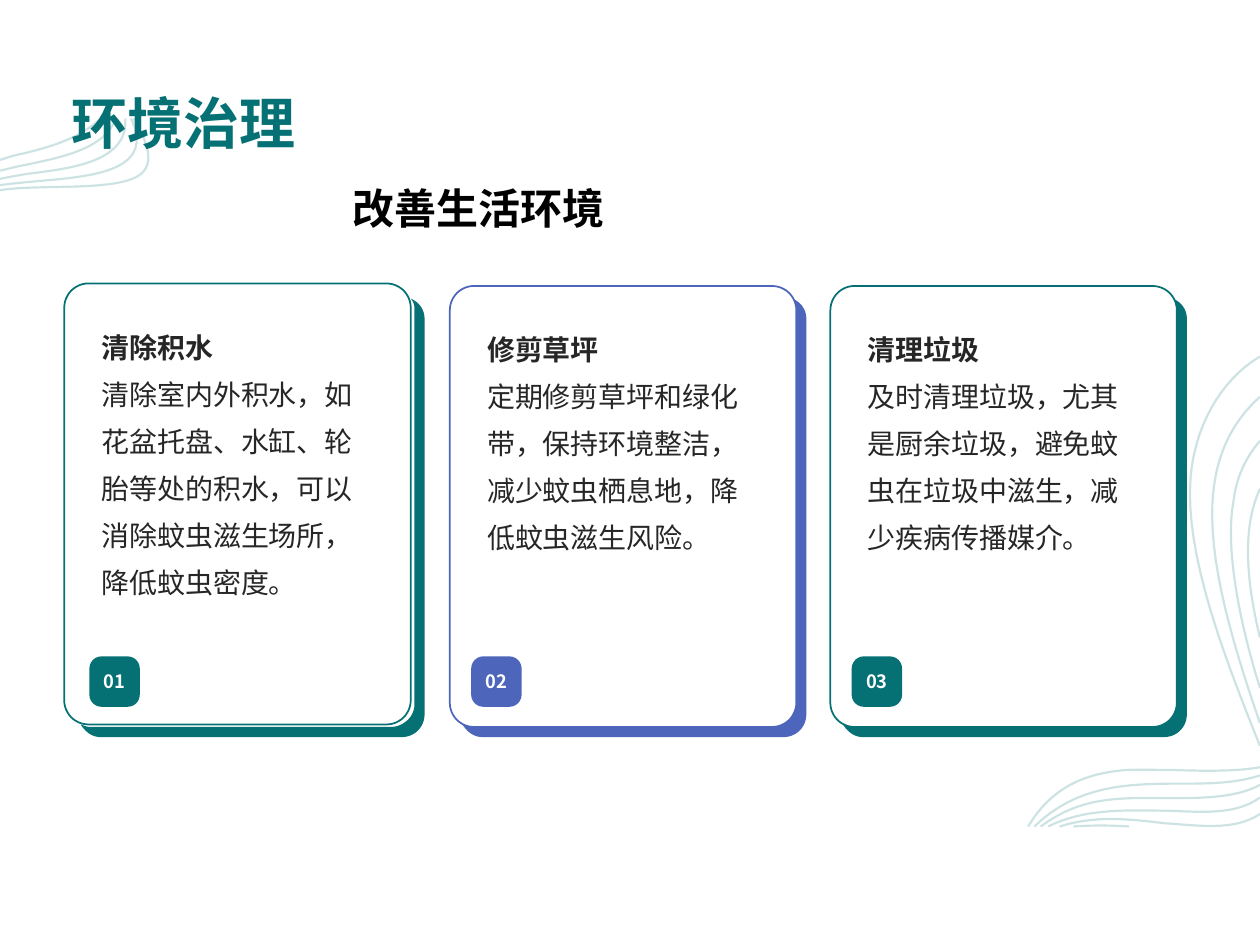
from lxml import etree
from pptx import Presentation
from pptx.dml.color import RGBColor
from pptx.enum.shapes import MSO_SHAPE
from pptx.enum.text import MSO_ANCHOR, PP_ALIGN
from pptx.oxml.ns import qn
from pptx.util import Inches, Pt

ROUNDED = MSO_SHAPE.ROUNDED_RECTANGLE
TOP, MIDDLE, BOTTOM = MSO_ANCHOR.TOP, MSO_ANCHOR.MIDDLE, MSO_ANCHOR.BOTTOM
LEFT, CENTER = PP_ALIGN.LEFT, PP_ALIGN.CENTER
COLUMNS, ROWS = 1000, 750
UNIT = Inches(10) // COLUMNS
CURVE_STEPS = 16
FONT = "Noto Sans CJK SC"
TEAL, BLUE, WHITE, INK, MIST = "057174", "4D65BB", "FFFFFF", "262626", "CDE3E3"

LEFT_WAVES = [
    [(0, 33), (6, 31, 12, 29, 18, 28), (38, 23, 62, 17, 80, 0)],
    [(0, 41.5), (7, 40, 13, 38, 20, 37), (47, 31, 83, 25, 92, 0)],
    [(0, 48), (10, 46, 20, 44, 30, 43), (60, 39, 102, 33, 99.5, 0)],
    [(0, 53), (10, 51.5, 23, 50.5, 33, 49.5), (75, 46, 124, 41, 104, 0)],
    [(0, 57), (12, 55, 25, 55, 40, 54.5), (75, 54, 105, 53, 114, 42),
     (123, 31, 114, 14, 106, 0)],
]
RIGHT_WAVES = [
    [(185, 107), (170, 139, 175, 184, 185, 225)],
    [(185, 69), (173, 83, 166, 99, 164, 117), (157, 154, 169, 214, 185, 265)],
    [(185, 34), (167, 50, 155, 71, 150, 96), (139, 149, 161, 223, 185, 293)],
    [(185, 2), (153, 21, 133, 59, 130, 98), (125, 159, 157, 241, 185, 311)],
    [(185, 328), (168, 331, 147, 331, 126, 330.5), (111, 330, 96, 330, 82, 330),
     (45, 332, 19, 345, 1, 375)],
    [(185, 334.5), (165, 341, 143, 341, 122, 341), (80, 341, 40, 342, 6, 375)],
    [(185, 342), (165, 353, 135, 352.5, 111, 352.5), (70, 352, 42, 352, 11, 375)],
    [(185, 352), (165, 367, 135, 363, 110, 362.5), (76, 362, 45, 361, 17, 375)],
    [(185, 365), (165, 379, 135, 374, 110, 372.5), (80, 369, 55, 366, 26, 375)],
    [(37, 375), (52, 374, 65, 374, 81, 375)],
]
CARD_EDGE = [
    (262, 0), (269, 3, 273, 9, 273, 16), (273, 330), (273, 340, 265, 348, 255, 348),
    (16, 348), (9, 348, 4, 344, 0, 338), (3, 339, 5, 340, 8, 340), (246, 340),
    (256, 340, 265, 332, 265, 322), (265, 8), (265, 5, 264, 2, 262, 0),
]
CARDS = [
    {"left": 64, "offset": (-13, -12), "color": TEAL, "opacity": 10, "heading": "清除积水",
     "body": "清除室内外积水，如花盆托盘、水缸、轮胎等处的积水，可以消除蚊虫滋生场所，降低蚊虫密度。"},
    {"left": 367, "offset": (-10, -10), "color": BLUE, "opacity": 100, "heading": "修剪草坪",
     "body": "定期修剪草坪和绿化带，保持环境整洁，减少蚊虫栖息地，降低蚊虫滋生风险。"},
    {"left": 669, "offset": (-10, -10), "color": TEAL, "opacity": 100, "heading": "清理垃圾",
     "body": "及时清理垃圾，尤其是厨余垃圾，避免蚊虫在垃圾中滋生，减少疾病传播媒介。"},
]


def rgb(color):
    return RGBColor.from_string(color)


def grid(*values):
    return [round(value * UNIT) for value in values]


def trace(outline, left, top):
    points = [outline[0]]
    for segment in outline[1:]:
        if len(segment) == 2:
            points.append(segment)
            continue
        corners = [points[-1], segment[:2], segment[2:4], segment[4:]]
        for step in range(1, CURVE_STEPS + 1):
            t = step / CURVE_STEPS
            weights = ((1 - t) ** 3, 3 * t * (1 - t) ** 2, 3 * t * t * (1 - t), t ** 3)
            points.append(tuple(sum(weight * corner[axis] for weight, corner in
                                    zip(weights, corners)) for axis in (0, 1)))
    return [tuple(grid(left + x, top + y)) for x, y in points]


def paint(shape, fill=None, line=None, width=1, opacity=100):
    shape.shadow.inherit = False
    if fill:
        shape.fill.solid()
        shape.fill.fore_color.rgb = rgb(fill)
        if opacity < 100:
            color = shape.fill._xPr.find(qn("a:solidFill"))[0]
            etree.SubElement(color, qn("a:alpha"), val=str(opacity * 1000))
    else:
        shape.fill.background()
    if line:
        shape.line.color.rgb = rgb(line)
        shape.line.width = Pt(width)
    else:
        shape.line.fill.background()


def add_outlines(slide, outlines, left, top, close, **style):
    first, *others = [trace(outline, left, top) for outline in outlines]
    builder = slide.shapes.build_freeform(*first[0], scale=1.0)
    builder.add_line_segments(first[1:], close=close)
    for points in others:
        builder.move_to(*points[0])
        builder.add_line_segments(points[1:], close=close)
    paint(builder.convert_to_shape(), **style)


def write(shape, lines, size, color, font=FONT, align=LEFT, spacing=None, **frame_format):
    frame = shape.text_frame
    settings = {"word_wrap": True, "vertical_anchor": TOP, **frame_format}
    for name, value in settings.items():
        setattr(frame, name, value)
    for index, (text, bold) in enumerate(lines):
        paragraph = frame.add_paragraph() if index else frame.paragraphs[0]
        paragraph.alignment = align
        paragraph.line_spacing = spacing
        run = paragraph.add_run()
        run.text = text
        for name, value in {"name": font, "size": Pt(size), "bold": bold}.items():
            setattr(run.font, name, value)
        run.font.color.rgb = rgb(color)
        etree.SubElement(run.font._element, qn("a:ea"), typeface=FONT)


def margins(left, top, right, bottom):
    names = ("margin_left", "margin_top", "margin_right", "margin_bottom")
    return dict(zip(names, grid(left, top, right, bottom)))


def add_waves(slide, strands, left, top):
    add_outlines(slide, strands, left, top, close=False, line=MIST, width=1.25)


def add_heading(slide, box, text, size, color, **text_format):
    shape = slide.shapes.add_textbox(*grid(*box))
    write(shape, [(text, True)], size, color, **text_format)


def add_panel(slide, box, corner, **style):
    shape = slide.shapes.add_shape(ROUNDED, *grid(*box))
    shape.adjustments[0] = corner
    paint(shape, **style)
    return shape


def add_card(slide, number, card, top):
    left, color = card["left"], card["color"]
    shift_x, shift_y = card["offset"]
    add_outlines(slide, [CARD_EDGE], left, top, close=True, fill=color)
    panel = add_panel(slide, (left + shift_x, top + shift_y, 275, 350), 0.07,
                      fill=WHITE, line=color, opacity=card["opacity"])
    write(panel, [(card["heading"], True), (card["body"], False)], 16, INK,
          spacing=1.4, **margins(24, 21, 24, 57))
    badge = add_panel(slide, (left + 7, top + 284, 40, 40), 0.24, fill=color)
    write(badge, [(f"{number:02}", True)], 10.5, WHITE, align=CENTER,
          vertical_anchor=MIDDLE, word_wrap=False)


def main():
    presentation = Presentation()
    presentation.slide_width = COLUMNS * UNIT
    presentation.slide_height = ROWS * UNIT
    slide = presentation.slides.add_slide(presentation.slide_layouts[6])
    add_waves(slide, LEFT_WAVES, 0, 94)
    add_waves(slide, RIGHT_WAVES, 815, 281)
    add_heading(slide, (57, 51, 886, 73), "环境治理", 32, TEAL,
                vertical_anchor=BOTTOM, **margins(0, 0, 0, 0))
    for number, card in enumerate(CARDS, 1):
        add_card(slide, number, card, 237)
    add_heading(slide, (270, 140, 508, 59), "改善生活环境", 24, "000000", font="Arial")
    presentation.save("out.pptx")


if __name__ == "__main__":
    main()
